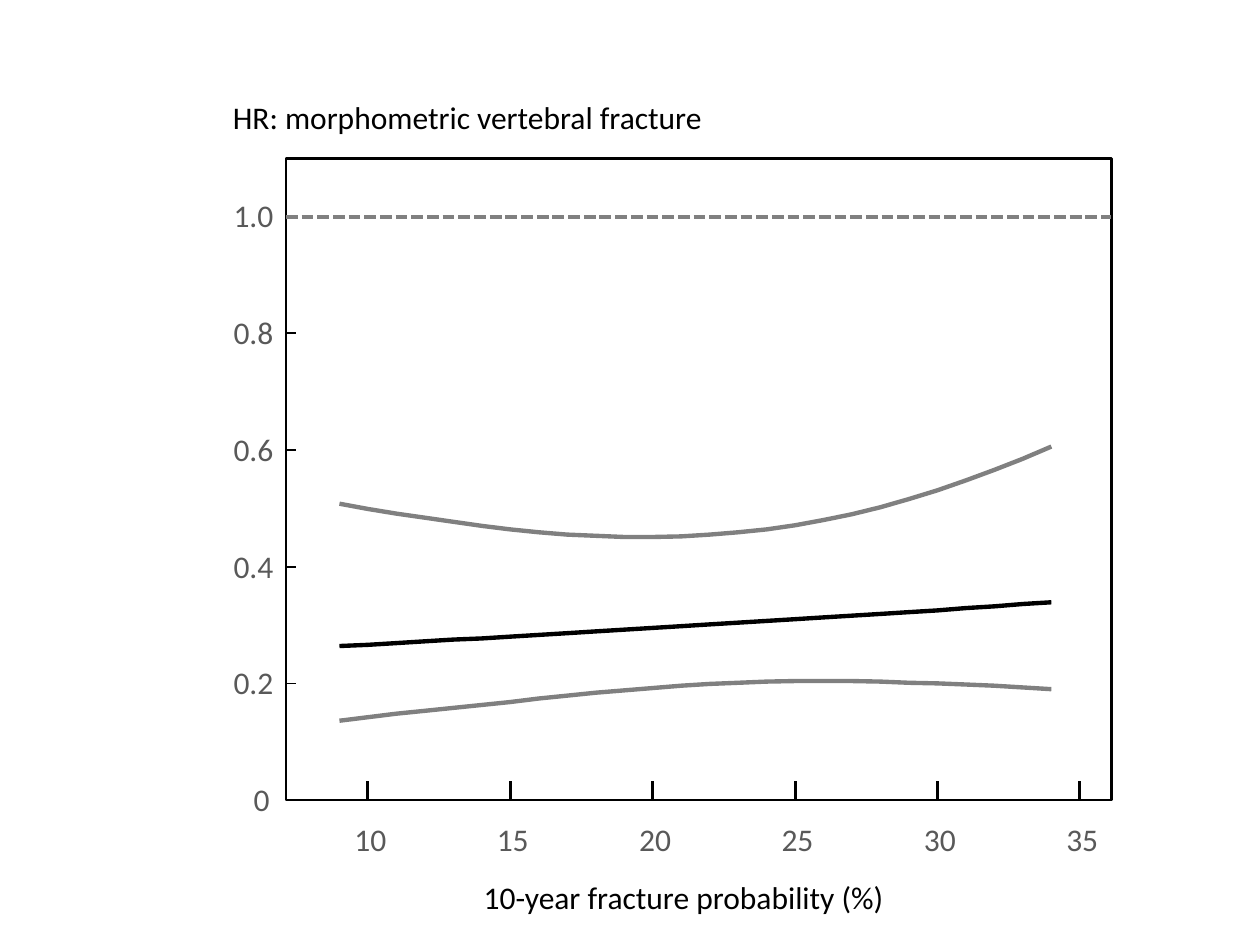
"""Hazard ratio of vertebral fracture against 10-year fracture probability."""
import pptx
import pptx.dml.color
import pptx.enum.dml
import pptx.enum.shapes
import pptx.enum.text
import pptx.oxml
import pptx.oxml.ns
import pptx.util

COLORS = {"ink": "000000", "band": "808080", "label": "595959"}
FONT = "Calibri"
SIZE = 18

TITLES = [
    ("10-year fracture probability (%)", 3.74, 6.92, 3.41),
    ("HR: morphometric vertebral fracture", 1.75, 0.73, 3.97),
]
RATIO_LABELS = ["0", "0.2", "0.4", "0.6", "0.8", "1.0"]
PROBABILITY_LABELS = ["10", "15", "20", "25", "30", "35"]

FIRST_PROBABILITY = 9
HR_PERCENT = [
    ("ink", [26.4, 26.6, 26.9, 27.2, 27.5, 27.7, 28, 28.3, 28.6, 28.9, 29.2, 29.5, 29.8,
             30.1, 30.4, 30.7, 31, 31.3, 31.6, 31.9, 32.2, 32.5, 32.9, 33.2, 33.6, 33.9]),
    ("band", [13.6, 14.2, 14.8, 15.3, 15.8, 16.3, 16.8, 17.4, 17.9, 18.4, 18.8, 19.2, 19.6,
              19.9, 20.1, 20.3, 20.4, 20.4, 20.4, 20.3, 20.1, 20, 19.8, 19.6, 19.3, 19]),
    ("band", [50.8, 49.9, 49.1, 48.4, 47.7, 47, 46.4, 45.9, 45.5, 45.3, 45.1, 45.1, 45.2,
              45.5, 45.9, 46.4, 47.1, 48, 49, 50.2, 51.6, 53.1, 54.8, 56.6, 58.5, 60.6]),
]

LEFT, TOP, RIGHT, BOTTOM = 2.27, 1.26, 8.82, 6.35
RATIO_HEIGHT = 4.63
FIVE_POINTS = 1.13
TEN_AT = 2.92
RATIO_TICK, PROBABILITY_TICK = 0.08, 0.15
LABEL_HEIGHT = 0.3

inch = pptx.util.Inches


def x_of(probability):
    return TEN_AT + (probability - 10) / 5 * FIVE_POINTS


def y_of(ratio):
    return BOTTOM - ratio * RATIO_HEIGHT


def rgb(key):
    return pptx.dml.color.RGBColor.from_string(COLORS[key])


def style_line(line, color, weight):
    line.color.rgb = rgb(color)
    line.width = pptx.util.Pt(weight)


def add_rule(shapes, start, end, color, weight):
    rule = shapes.add_connector(pptx.enum.shapes.MSO_CONNECTOR.STRAIGHT,
                                *(inch(v) for v in start + end))
    style_line(rule.line, color, weight)
    rule._element.spPr.append(pptx.oxml.parse_xml(
        "<a:effectLst %s/>" % pptx.oxml.ns.nsdecls("a")))
    return rule


def add_text(shapes, text, left, top, width, height, color, align, inset=True):
    frame = shapes.add_textbox(*(inch(v) for v in (left, top, width, height))).text_frame
    frame.word_wrap = False
    frame.auto_size = pptx.enum.text.MSO_AUTO_SIZE.SHAPE_TO_FIT_TEXT
    if not inset:
        frame.margin_left = frame.margin_right = frame.margin_top = frame.margin_bottom = 0
    paragraph = frame.paragraphs[0]
    paragraph.alignment = align
    run = paragraph.add_run()
    run.text = text
    run.font.name = FONT
    run.font.size = pptx.util.Pt(SIZE)
    run.font.color.rgb = rgb(color)


def add_curve(shapes, percents, color):
    points = [(inch(x_of(FIRST_PROBABILITY + i)), inch(y_of(percent / 100)))
              for i, percent in enumerate(percents)]
    builder = shapes.build_freeform(*points[0])
    builder.add_line_segments(points[1:], close=False)
    curve = builder.convert_to_shape()
    curve.shadow.inherit = False
    curve.fill.background()
    style_line(curve.line, color, 2.5)


def main():
    deck = pptx.Presentation()
    deck.slide_width, deck.slide_height = inch(10), inch(7.5)
    shapes = deck.slides.add_slide(deck.slide_layouts[6]).shapes
    align = pptx.enum.text.PP_ALIGN

    plot = shapes.add_shape(pptx.enum.shapes.MSO_SHAPE.RECTANGLE,
                            *(inch(v) for v in (LEFT, TOP, RIGHT - LEFT, BOTTOM - TOP)))
    plot.shadow.inherit = False
    plot.fill.background()
    style_line(plot.line, "ink", 1.5)

    for label in RATIO_LABELS:
        y = y_of(float(label))
        add_rule(shapes, (LEFT, y), (LEFT + RATIO_TICK, y), "ink", 1)
    for color, percents in HR_PERCENT:
        add_curve(shapes, percents, color)

    for label in RATIO_LABELS:
        width = 0.32 if "." in label else 0.13
        right = 2.17 if "." in label else 2.14
        add_text(shapes, label, right - width, y_of(float(label)) - 0.16, width,
                 LABEL_HEIGHT, "label", align.RIGHT, inset=False)
    for label in PROBABILITY_LABELS:
        x = x_of(int(label))
        add_text(shapes, label, x - 0.11, 6.51, 0.26, LABEL_HEIGHT,
                 "label", align.CENTER, inset=False)
        add_rule(shapes, (x, BOTTOM), (x, BOTTOM - PROBABILITY_TICK), "ink", 1.75)

    unity = add_rule(shapes, (LEFT, y_of(1)), (RIGHT, y_of(1)), "band", 2.25)
    unity.line.dash_style = pptx.enum.dml.MSO_LINE.SQUARE_DOT

    for text, left, top, width in TITLES:
        add_text(shapes, text, left, top, width, 0.4, "ink", align.LEFT)

    deck.save("out.pptx")


if __name__ == "__main__":
    main()
